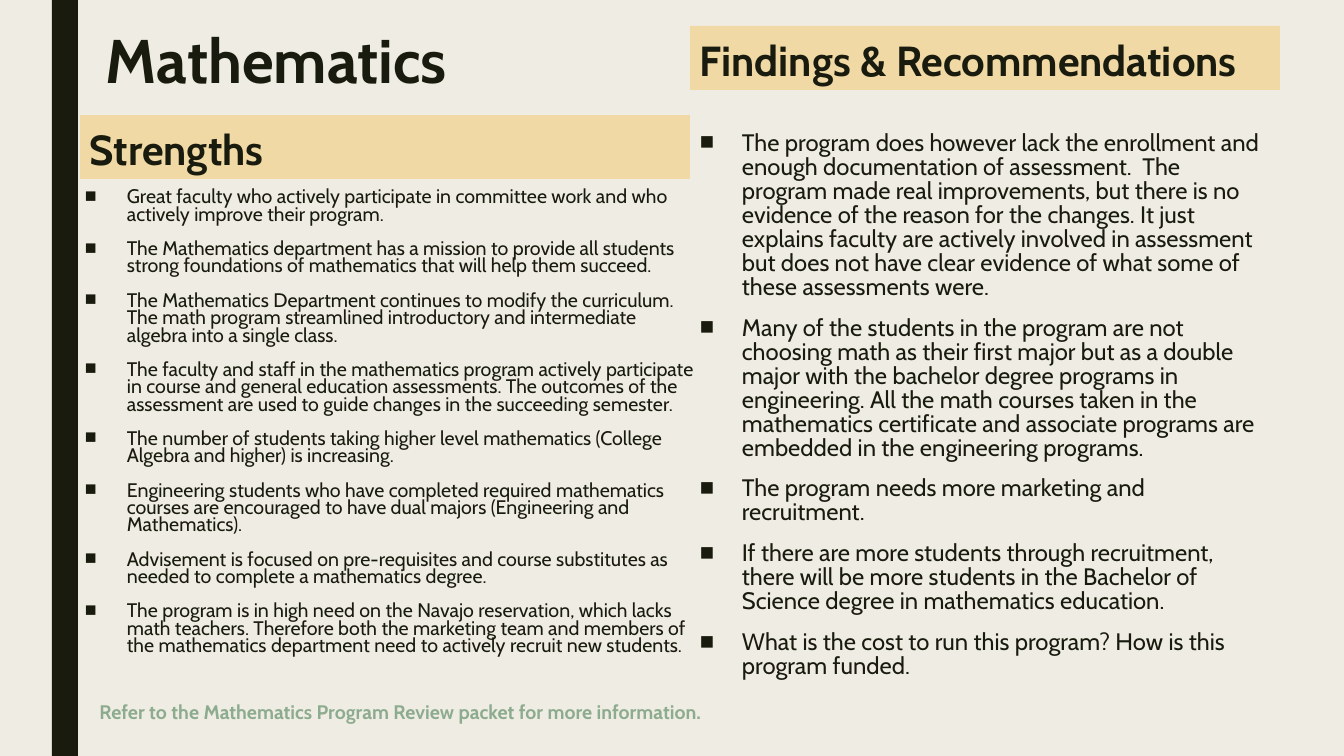
from pptx import Presentation
from pptx import util as u
from pptx.dml.color import RGBColor
from pptx.enum import shapes, text
from lxml import etree

PX = 914400 / 100.8
FONT = "Cabin"
INK, SAND, PAPER, SAGE = "191B0E", "F0D9A5", "EFEDE3", "8DAB8E"

SIDEBAR = (52, 0, 26, 756)
TITLE = ("Mathematics", (96, 26, 1058, 163))
NOTE = ("Refer to the Mathematics Program Review packet for more information.", (23, 695, 755, 34))

STRENGTHS = [
    "Great faculty who actively participate in committee work and who actively improve their program.",
    "The Mathematics department has a mission to provide all students strong foundations of mathematics that will help them succeed.",
    "The Mathematics Department continues to modify the curriculum. The math program streamlined introductory and intermediate algebra into a single class.",
    "The faculty and staff in the mathematics program actively participate in course and general education assessments. The outcomes of the assessment are used to guide changes in the succeeding semester.",
    "The number of students taking higher level mathematics (College Algebra and higher) is increasing.",
    "Engineering students who have completed required mathematics courses are encouraged to have dual majors (Engineering and Mathematics).",
    "Advisement is focused on pre-requisites and course substitutes as needed to complete a mathematics degree.",
    "The program is in high need on the Navajo reservation, which lacks math teachers. Therefore both the marketing team and members of the mathematics department need to actively recruit new students.",
]
FINDINGS = [
    "The program does however lack the enrollment and enough documentation of assessment.  The program made real improvements, but there is no evidence of the reason for the changes. It just explains faculty are actively involved in assessment but does not have clear evidence of what some of these assessments were.",
    "Many of the students in the program are not choosing math as their first major but as a double major with the bachelor degree programs in engineering. All the math courses taken in the mathematics certificate and associate programs are embedded in the engineering programs.",
    "The program needs more marketing and recruitment.",
    "If there are more students through recruitment, there will be more students in the Bachelor of Science degree in mathematics education.",
    "What is the cost to run this program? How is this program funded.",
]
COLUMNS = [
    ("Strengths", (80, 115, 610, 64), STRENGTHS, (75, 185, 634, 528), 14, 0.74),
    ("Findings & Recommendations", (690, 26, 590, 64), FINDINGS, (690, 127, 583, 578), 17, 0.84),
]


def rgb(value):
    return RGBColor.from_string(value)


def emu(box):
    return [round(v * PX) for v in box]


def add_rect(box, color):
    sp = s.shapes.add_shape(shapes.MSO_SHAPE.RECTANGLE, *emu(box))
    sp.shadow.inherit = False
    sp.fill.solid()
    sp.fill.fore_color.rgb = rgb(color)
    sp.line.fill.background()
    return sp


def add_bullet(p):
    pPr = p._p.get_or_add_pPr()
    indent = round(42 * PX)
    pPr.set("marL", str(indent))
    pPr.set("indent", str(-indent))
    ns = pPr.nsmap["a"]
    etree.SubElement(pPr, f"{{{ns}}}buFont", typeface="Arial")
    etree.SubElement(pPr, f"{{{ns}}}buChar", char="■")


def write(sp, lines, size, color=INK, bold=False, spacing=1.0, bullets=False,
          align=text.PP_ALIGN.LEFT, anchor=text.MSO_ANCHOR.TOP):
    tf = sp.text_frame
    tf.word_wrap = True
    tf.vertical_anchor = anchor
    for i, line in enumerate(lines):
        p = tf.paragraphs[0] if i == 0 else tf.add_paragraph()
        p.alignment = align
        p.line_spacing = spacing
        if bullets:
            p.space_before, p.space_after = u.Pt(10), u.Pt(2)
            add_bullet(p)
        r = p.add_run()
        r.text = line
        r.font.name = FONT
        r.font.size = u.Pt(size)
        r.font.bold = bold
        r.font.color.rgb = rgb(color)


def add_text(box, lines, size, **style):
    write(s.shapes.add_textbox(*emu(box)), lines, size, **style)


prs = Presentation()
prs.slide_width, prs.slide_height = emu((1344, 756))
s = prs.slides.add_slide(prs.slide_layouts[6])
s.background.fill.solid()
s.background.fill.fore_color.rgb = rgb(PAPER)

add_rect(SIDEBAR, INK)
title, title_box = TITLE
add_text(title_box, [title], 44, bold=True, spacing=0.89)
for heading, band, items, box, size, spacing in COLUMNS:
    write(add_rect(band, SAND), [heading], 30, bold=True, spacing=0.84,
          anchor=text.MSO_ANCHOR.BOTTOM)
    add_text(box, items, size, spacing=spacing, bullets=True)
note, note_box = NOTE
add_text(note_box, [note], 14, color=SAGE, bold=True, align=text.PP_ALIGN.CENTER)

prs.save("out.pptx")
